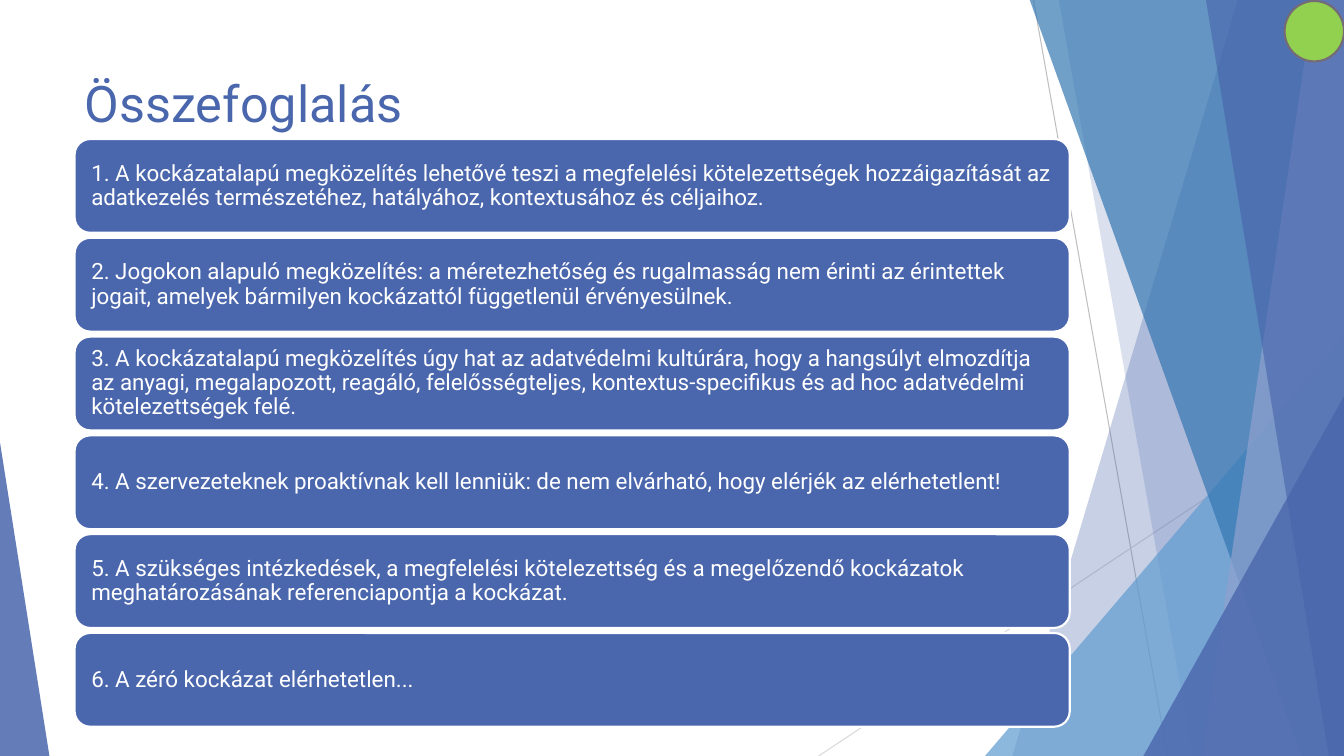
"""Build the Hungarian summary slide with six rounded bars on a faceted background."""
from lxml import etree
from pptx import Presentation
from pptx.dml.color import RGBColor
from pptx.enum.shapes import MSO_CONNECTOR, MSO_SHAPE as SHAPE
from pptx.enum.text import MSO_ANCHOR as ANCHOR, MSO_AUTO_SIZE as AUTO_SIZE, PP_ALIGN as ALIGN
from pptx.oxml.ns import qn
from pptx.util import Emu, Pt

NAVY = RGBColor(0x4A, 0x66, 0xAC)
SKY = RGBColor(0x62, 0x9D, 0xD1)
OCEAN = RGBColor(0x34, 0x77, 0xB2)
LAVENDER = RGBColor(0x90, 0xA2, 0xCF)
SILVER = RGBColor(0xBF, 0xBF, 0xBF)
PALE = RGBColor(0xD9, 0xD9, 0xD9)
LIME = RGBColor(0x92, 0xD0, 0x50)
TAUPE = RGBColor(0x74, 0x6B, 0x76)
WHITE = RGBColor(0xFF, 0xFF, 0xFF)

PX = 9144
WIDTH, HEIGHT = 1333, 750
FACET_TOP = -1

SUMMARY = [
    "1. A kockázatalapú megközelítés lehetővé teszi a megfelelési kötelezettségek hozzáigazítását az adatkezelés természetéhez, hatályához, kontextusához és céljaihoz.",
    "2. Jogokon alapuló megközelítés: a méretezhetőség és rugalmasság nem érinti az érintettek jogait, amelyek bármilyen kockázattól függetlenül érvényesülnek.",
    "3. A kockázatalapú megközelítés úgy hat az adatvédelmi kultúrára, hogy a hangsúlyt elmozdítja az anyagi, megalapozott, reagáló, felelősségteljes, kontextus-specifikus és ad hoc adatvédelmi kötelezettségek felé.",
    "4. A szervezeteknek proaktívnak kell lenniük: de nem elvárható, hogy elérjék az elérhetetlent!",
    "5. A szükséges intézkedések, a megfelelési kötelezettség és a megelőzendő kockázatok meghatározásának referenciapontja a kockázat.",
    "6. A zéró kockázat elérhetetlen...",
]
BAR_LEFT, BAR_TOP, BAR_WIDTH, BAR_HEIGHT, BAR_PITCH = 74, 138, 987, 93, 98


class SlidePainter:
    """Hold the text style and the current slide."""

    font_name = "Roboto"

    def __init__(self, slide):
        self.slide = slide
        self.shapes = slide.shapes

    def apply(self, target, values):
        for name, value in values.items():
            setattr(target, name, value)

    def paint(self, shape, color, opacity=100, outline=None):
        shape.shadow.inherit = False
        shape.fill.solid()
        shape.fill.fore_color.rgb = color
        if opacity < 100:
            tint = shape.element.spPr.find(qn("a:solidFill"))[0]
            etree.SubElement(tint, qn("a:alpha"), val=str(opacity * 1000))
        if outline:
            shape.line.color.rgb = outline
            shape.line.width = Pt(1.5)
        else:
            shape.line.fill.background()

    def line(self, start, end, color):
        ray = self.shapes.add_connector(
            MSO_CONNECTOR.STRAIGHT, *(Emu(n * PX) for n in (*start, *end)))
        ray.line.color.rgb = color
        ray.line.width = Pt(0.75)
        etree.SubElement(ray.element.spPr, qn("a:effectLst"))

    def facet(self, corners, color, opacity):
        outline = self.shapes.build_freeform(*corners[0], scale=PX)
        outline.add_line_segments(corners[1:], close=True)
        self.paint(outline.convert_to_shape(), color, opacity)

    def preset(self, kind, box, color, opacity=100, outline=None):
        shape = self.shapes.add_shape(kind, *(Emu(n * PX) for n in box))
        self.paint(shape, color, opacity, outline)
        return shape

    def triangle(self, box, apex, color, opacity):
        self.preset(SHAPE.ISOSCELES_TRIANGLE, box, color, opacity).adjustments[0] = apex

    def set_text(self, shape, text, size, color, frame_format, paragraph_format):
        frame = shape.text_frame
        frame.text = text
        self.apply(frame, {"word_wrap": True, "auto_size": AUTO_SIZE.NONE, **frame_format})
        paragraph = frame.paragraphs[0]
        self.apply(paragraph, {"alignment": ALIGN.LEFT, **paragraph_format})
        font = paragraph.runs[0].font
        self.apply(font, {"name": self.font_name, "size": Pt(size)})
        font.color.rgb = color

    def title(self, text, box):
        heading = self.shapes.title
        self.apply(heading, dict(zip(("left", "top", "width", "height"),
                                     (Emu(n * PX) for n in box))))
        self.set_text(heading, text, 36, NAVY, {"vertical_anchor": ANCHOR.TOP}, {})
        heading.element.getparent().append(heading.element)

    def bar(self, text, box):
        bar = self.preset(SHAPE.ROUNDED_RECTANGLE, box, NAVY, outline=WHITE)
        side, edge = Emu(12 * PX), Emu(8 * PX)
        self.set_text(bar, text, 16, WHITE,
                      {"vertical_anchor": ANCHOR.MIDDLE, "margin_left": side,
                       "margin_right": side, "margin_top": edge, "margin_bottom": edge},
                      {"line_spacing": 0.9})


def draw_background(painter):
    def right_facet(top_x, bottom_x, color, opacity):
        painter.facet([(top_x, FACET_TOP), (WIDTH, FACET_TOP),
                       (WIDTH, HEIGHT), (bottom_x, HEIGHT)], color, opacity)

    painter.line((1025, 0), (1158, HEIGHT), SILVER)
    painter.line((WIDTH, 403), (812, HEIGHT), PALE)
    right_facet(1228, 1004, NAVY, 30)
    right_facet(1050, 1183, NAVY, 20)
    painter.triangle((977, 333, 356, 417), 1, SKY, 72)
    right_facet(1021, 1291, OCEAN, 70)
    right_facet(1303, 1192, LAVENDER, 70)
    right_facet(1196, 1318, NAVY, 65)
    painter.triangle((1134, 393, 199, 357), 1, NAVY, 80)
    painter.triangle((0, 439, 49, 311), 0, NAVY, 85)


def main():
    deck = Presentation()
    deck.slide_width, deck.slide_height = Emu(WIDTH * PX), Emu(HEIGHT * PX)
    painter = SlidePainter(deck.slides.add_slide(deck.slide_layouts[5]))
    draw_background(painter)
    painter.title("Összefoglalás", (74, 67, 940, 96))
    for row, point in enumerate(SUMMARY):
        painter.bar(point, (BAR_LEFT, BAR_TOP + row * BAR_PITCH, BAR_WIDTH, BAR_HEIGHT))
    painter.preset(SHAPE.OVAL, (1274, 1, 59, 60), LIME, outline=TAUPE)
    deck.save("out.pptx")


if __name__ == "__main__":
    main()
